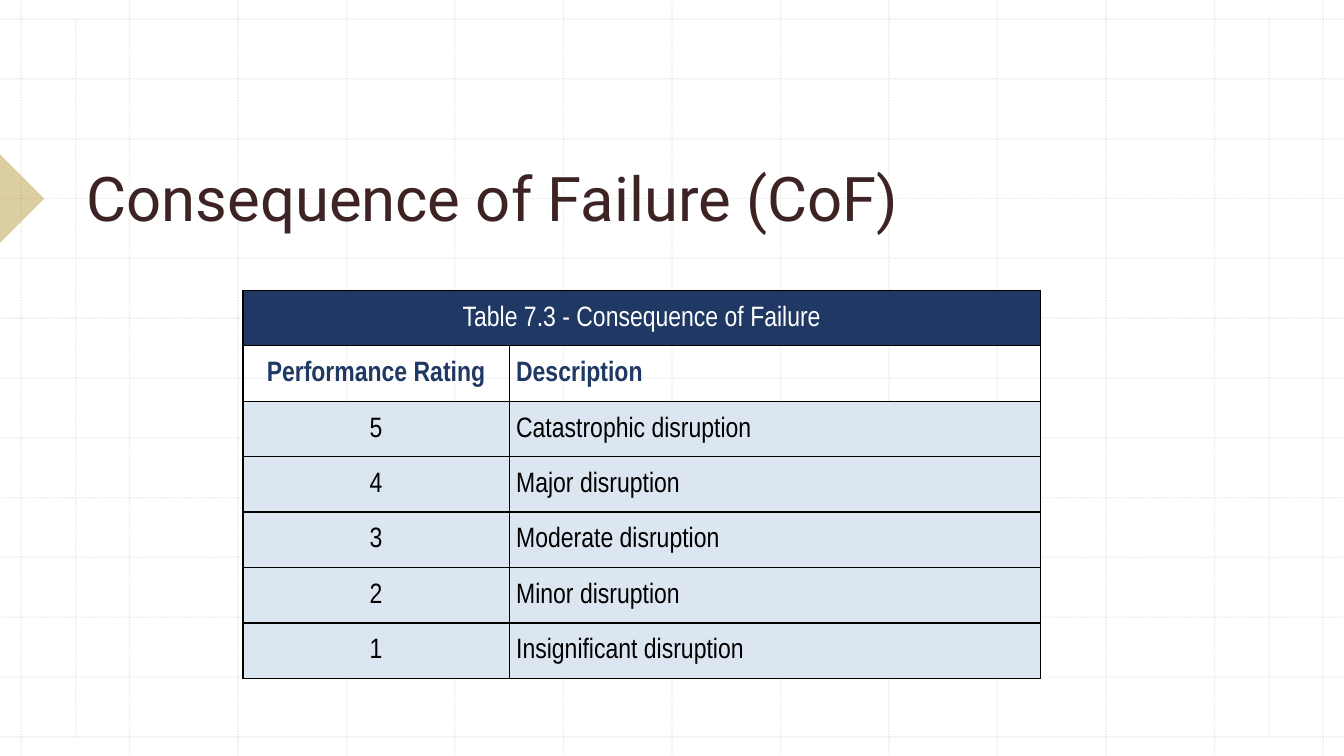
"""Build the Consequence of Failure slide."""
from lxml import etree
from pptx import Presentation
from pptx.dml.color import RGBColor
from pptx.enum.dml import MSO_LINE
from pptx.enum.shapes import MSO_CONNECTOR, MSO_SHAPE
from pptx.enum.text import MSO_ANCHOR, PP_ALIGN
from pptx.oxml.ns import qn
from pptx.util import Inches, Pt

STRAIGHT = MSO_CONNECTOR.STRAIGHT
DOTS = MSO_LINE.ROUND_DOT
WEDGE = MSO_SHAPE.RIGHT_TRIANGLE
MIDDLE, BOTTOM = MSO_ANCHOR.MIDDLE, MSO_ANCHOR.BOTTOM
CENTER, LEFT = PP_ALIGN.CENTER, PP_ALIGN.LEFT

TITLE = "Consequence of Failure (CoF)"
ROWS = [
    ("Table 7.3 - Consequence of Failure", ""),
    ("Performance Rating", "Description"),
    ("5", "Catastrophic disruption"),
    ("4", "Major disruption"),
    ("3", "Moderate disruption"),
    ("2", "Minor disruption"),
    ("1", "Insignificant disruption"),
]
COLORS = {"grid": "BCBCBC", "wedge": "B99E44", "title": "3D2324", "navy": "1F3864",
          "white": "FFFFFF", "pale": "DCE6F1", "black": "000000"}
STYLES = [("navy", "white", False), (None, "navy", True)]
BODY = ("pale", "black", False)
WIDTHS = (2.64, 5.27)
ROW_H = 0.55
WIDE, HIGH = 13.33, 7.5
GRID_L, GRID_R, GRID_T, GRID_B = 0.21, 13.12, 0.19, 7.31
STEPS = 12


def rgb(name):
    return RGBColor.from_string(COLORS[name])


def fade(props, percent):
    color = next(props.iter(qn("a:srgbClr")))
    etree.SubElement(color, qn("a:alpha"), val=str(percent * 1000))


def rule(shapes, x1, y1, x2, y2):
    line = shapes.add_connector(STRAIGHT, Inches(x1), Inches(y1), Inches(x2), Inches(y2))
    line.line.color.rgb = rgb("grid")
    line.line.width = Pt(1)
    line.line.dash_style = DOTS
    props = line._element.spPr
    fade(props, 30)
    etree.SubElement(props, qn("a:effectLst"))


def draw_grid(shapes):
    for i in range(STEPS + 1):
        x = GRID_L + i * (GRID_R - GRID_L) / STEPS
        y = GRID_T + i * (GRID_B - GRID_T) / STEPS
        rule(shapes, x, 0, x, HIGH)
        rule(shapes, 0, y, WIDE, y)
    for x in (0.75, 12.59):
        rule(shapes, x, GRID_T, x, GRID_B)


def draw_title(shapes):
    wedge = shapes.add_shape(WEDGE, Inches(-0.31), Inches(1.66), Inches(0.62), Inches(0.62))
    wedge.rotation = 225
    wedge.shadow.inherit = False
    wedge.fill.solid()
    wedge.fill.fore_color.rgb = rgb("wedge")
    fade(wedge._element.spPr, 50)
    wedge.line.fill.background()

    frame = shapes.add_textbox(Inches(0.76), Inches(0.79), Inches(11.29), Inches(1.58)).text_frame
    frame.word_wrap = True
    frame.vertical_anchor = BOTTOM
    para = frame.paragraphs[0]
    para.text = TITLE
    para.font.name = "Roboto"
    para.font.size = Pt(44)
    para.font.color.rgb = rgb("title")


def border(cell):
    props = cell._tc.get_or_add_tcPr()
    for side in ("lnL", "lnR", "lnT", "lnB"):
        edge = etree.SubElement(props, qn("a:" + side), w=str(Pt(1)))
        solid = etree.SubElement(edge, qn("a:solidFill"))
        etree.SubElement(solid, qn("a:srgbClr"), val=COLORS["black"])


def fill_cell(cell, text, style, align):
    back, ink, bold = style
    border(cell)
    if back:
        cell.fill.solid()
        cell.fill.fore_color.rgb = rgb(back)
    else:
        cell.fill.background()
    cell.vertical_anchor = MIDDLE
    cell.margin_left = cell.margin_right = Inches(0.07)
    cell.margin_top = cell.margin_bottom = 0
    para = cell.text_frame.paragraphs[0]
    para.text = text
    para.alignment = align
    para.line_spacing = 1.07
    para.space_before = para.space_after = Pt(4)
    para.font.name = "Arial Narrow"
    para.font.size = Pt(20)
    para.font.bold = bold
    para.font.color.rgb = rgb(ink)


def draw_table(shapes):
    table = shapes.add_table(len(ROWS), len(WIDTHS), Inches(2.41), Inches(2.88),
                             Inches(sum(WIDTHS)), Inches(ROW_H * len(ROWS))).table
    table.first_row = table.horz_banding = False
    for col, width in zip(table.columns, WIDTHS):
        col.width = Inches(width)
    for r, texts in enumerate(ROWS):
        table.rows[r].height = Inches(ROW_H)
        style = STYLES[r] if r < len(STYLES) else BODY
        for c, (text, align) in enumerate(zip(texts, (CENTER, LEFT))):
            fill_cell(table.cell(r, c), text, style, align)
    table.cell(0, 0).merge(table.cell(0, 1))


def main():
    deck = Presentation()
    deck.slide_width, deck.slide_height = Inches(WIDE), Inches(HIGH)
    shapes = deck.slides.add_slide(deck.slide_layouts[6]).shapes
    draw_grid(shapes)
    draw_title(shapes)
    draw_table(shapes)
    deck.save("out.pptx")


if __name__ == "__main__":
    main()
